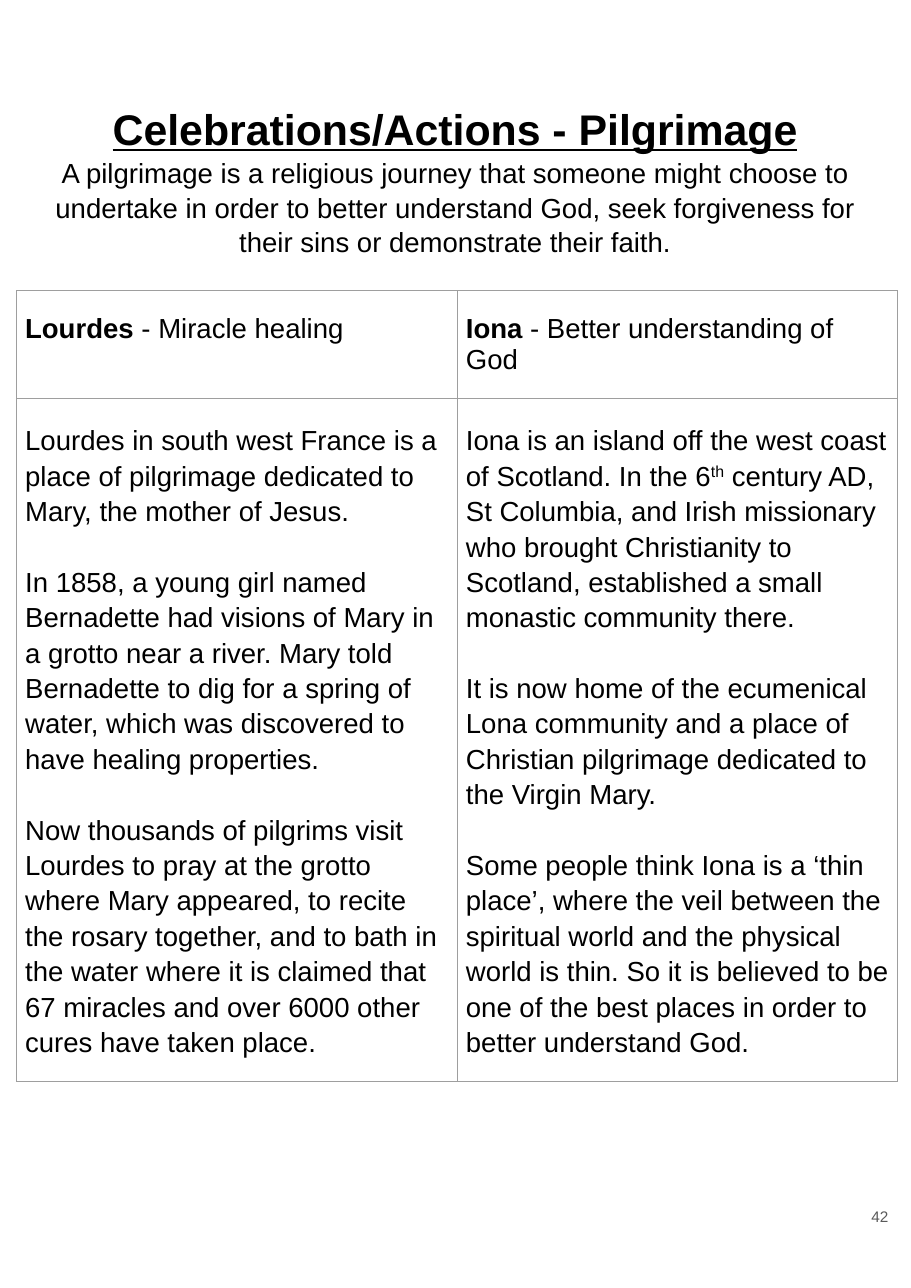
from lxml import etree
from pptx import Presentation
from pptx.dml.color import RGBColor
from pptx.enum.text import MSO_ANCHOR, MSO_AUTO_SIZE, PP_ALIGN
from pptx.oxml.ns import qn
from pptx.util import Cm, Pt

LEFT, CENTER, RIGHT = PP_ALIGN.LEFT, PP_ALIGN.CENTER, PP_ALIGN.RIGHT
TOP, MIDDLE = MSO_ANCHOR.TOP, MSO_ANCHOR.MIDDLE
NO_FIT = MSO_AUTO_SIZE.NONE
TITLE_ONLY = 5

TITLE = "Celebrations/Actions - Pilgrimage"
DEFINITION = (
    "A pilgrimage is a religious journey that someone might choose to undertake in order "
    "to better understand God, seek forgiveness for their sins or demonstrate their faith."
)
HEADINGS = [("Lourdes", " - Miracle healing"), ("Iona ", "- Better understanding of God")]
LOURDES = [
    ["Lourdes in south west France is a place of pilgrimage dedicated to Mary, the mother of Jesus."],
    ["In 1858, a young girl named Bernadette had visions of Mary in a grotto near a river. "
     "Mary told Bernadette to dig for a spring of water, which was discovered to have healing properties."],
    ["Now thousands of pilgrims visit Lourdes to pray at the grotto where Mary appeared, to recite "
     "the rosary together, and to bath in the water where it is claimed that 67 miracles and "
     "over 6000 other cures have taken place."],
]
IONA = [
    ["Iona is an island off the west coast of Scotland. In the 6", ("th", {"raised": 30}),
     " century AD, St Columbia, and Irish missionary who brought Christianity to Scotland, "
     "established a small monastic community there."],
    ["It is now home of the ecumenical Lona community and a place of Christian pilgrimage "
     "dedicated to the Virgin Mary."],
    ["Some people think Iona is a ‘thin place’, where the veil between the spiritual world and "
     "the physical world is thin. So it is believed to be one of the best places in order to "
     "better understand God."],
]


def color(value):
    """Turn a hex string into a colour."""
    return RGBColor.from_string(value)


def add_span(para, text, size=18, bold=False, underline=False, ink="000000", raised=0):
    """Add a formatted run to a paragraph."""
    span = para.add_run()
    span.text = text
    font = span.font
    font.name, font.size, font.bold, font.underline = "Arial", Pt(size), bold, underline
    font.color.rgb = color(ink)
    if raised:
        font._element.set("baseline", str(raised * 1000))


def write(frame, paragraphs, align=LEFT, spacing=1.0, gap=0, **style):
    """Fill a text frame with paragraphs made of strings or (string, style) pairs."""
    for index, spans in enumerate(paragraphs):
        para = frame.add_paragraph() if index else frame.paragraphs[0]
        para.alignment = align
        para.line_spacing = spacing
        para.space_before = Pt(gap if index else 0)
        for part in spans:
            text, extra = (part, {}) if isinstance(part, str) else part
            add_span(para, text, **{**style, **extra})


class Handout:
    """Hold the style and the current page of a portrait handout."""

    line = "9E9E9E"
    muted = "595959"

    def __init__(self, deck):
        """Start a page with the title-only layout."""
        self.page = deck.slides.add_slide(deck.slide_layouts[TITLE_ONLY])

    def prepare(self, box, left, top, width, height, anchor):
        """Place a text shape and set its frame."""
        box.left, box.top, box.width, box.height = map(Cm, (left, top, width, height))
        frame = box.text_frame
        frame.word_wrap, frame.auto_size, frame.vertical_anchor = True, NO_FIT, anchor
        frame.margin_left = frame.margin_right = Cm(0.25)
        frame.margin_top = frame.margin_bottom = Cm(0.25)
        return frame

    def title(self, place, paragraphs, **style):
        """Format the title placeholder."""
        write(self.prepare(self.page.shapes.title, *place, TOP), paragraphs, **style)

    def text(self, place, paragraphs, **style):
        """Add a text box."""
        box = self.page.shapes.add_textbox(0, 0, 0, 0)
        write(self.prepare(box, *place, MIDDLE), paragraphs, **style)

    def border(self, cell):
        """Draw a thin line on every side of a cell."""
        properties = cell._tc.get_or_add_tcPr()
        for position, side in enumerate(("lnL", "lnR", "lnT", "lnB")):
            edge = etree.Element(qn(f"a:{side}"), w=str(Pt(0.75)))
            fill = etree.SubElement(edge, qn("a:solidFill"))
            etree.SubElement(fill, qn("a:srgbClr"), val=self.line)
            properties.insert(position, edge)

    def table(self, left, top, width, heights, rows, styles):
        """Add a bordered table with one text style per row."""
        frame = self.page.shapes.add_table(
            len(rows), len(rows[0]), Cm(left), Cm(top), Cm(width), Cm(sum(heights)))
        table = frame.table
        table.first_row = table.horz_banding = False
        for row, height, contents, style in zip(table.rows, heights, rows, styles):
            row.height = Cm(height)
            for cell, paragraphs in zip(row.cells, contents):
                cell.fill.background()
                cell.margin_left = cell.margin_right = Cm(0.2)
                cell.margin_top = cell.margin_bottom = Cm(0.53)
                self.border(cell)
                write(cell.text_frame, paragraphs, **style)


def main():
    """Build the pilgrimage handout."""
    deck = Presentation()
    deck.slide_width, deck.slide_height = Cm(21), Cm(29.7)
    handout = Handout(deck)
    handout.title(
        (0.71, 2.06, 19.56, 3.3),
        [[(TITLE, {"size": 28, "bold": True, "underline": True})], [DEFINITION]],
        align=CENTER, spacing=1.05)
    headings = [[[(name, {"bold": True}), reason]] for name, reason in HEADINGS]
    handout.table(
        0.38, 6.7, 20.32, (2.47, 15.76),
        [headings, [LOURDES, IONA]],
        [{}, {"spacing": 1.15, "gap": 23}])
    handout.text((19.46, 26.92, 1.27, 2.26), [["42"]], align=RIGHT, size=10, ink=handout.muted)
    deck.save("out.pptx")


if __name__ == "__main__":
    main()
